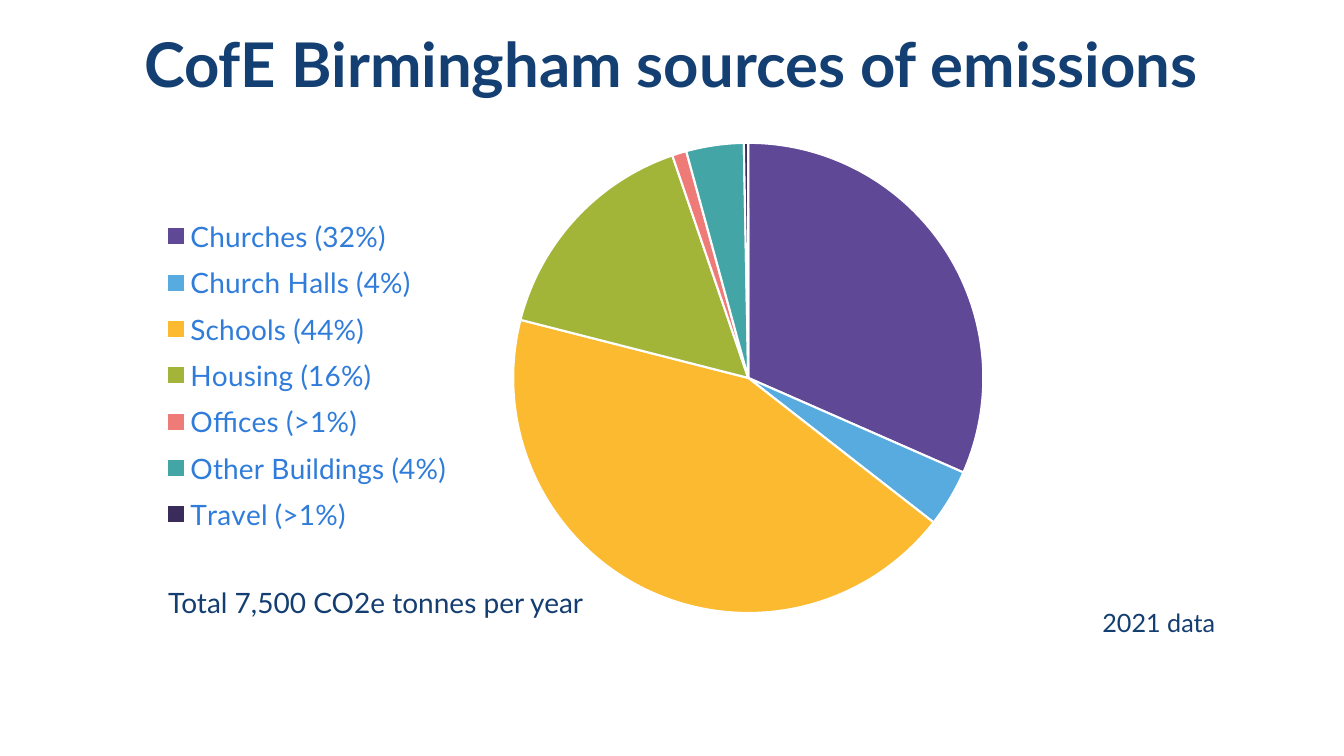
"""Build a slide with a pie chart of emission sources."""
import pptx
import pptx.chart.data
import pptx.dml.color
import pptx.enum.chart
import pptx.enum.text
import pptx.oxml
import pptx.oxml.ns
import pptx.util

Cm = pptx.util.Cm
Pt = pptx.util.Pt

FONT = "Lato"
NAVY = "143E71"
WHITE = "FFFFFF"
SOURCES = [
    ("Churches (32%)", 32, "5F4896"),
    ("Church Halls (4%)", 4, "57ABDF"),
    ("Schools (44%)", 44, "FBBA30"),
    ("Housing (16%)", 16, "A2B539"),
    ("Offices (>1%)", 1, "EF7B78"),
    ("Other Buildings (4%)", 4, "43A5A6"),
    ("Travel (>1%)", 0.3, "392B5A"),
]
CENTER = pptx.enum.text.PP_ALIGN.CENTER
LEFT = pptx.enum.text.PP_ALIGN.LEFT
TEXTS = [
    ("CofE Birmingham sources of emissions", (3.02, 0.53, 27.81, 2.13), 44, "143F72", True, CENTER),
    ("2021 data", (27.53, 15.19, 6.6, 1.02), 18, NAVY, False, LEFT),
    ("Total 7,500 CO2e tonnes per year", (3.99, 14.63, 12.27, 1.12), 20, NAVY, False, LEFT),
]
CHART_BOX = (3.02, 3.2, 24.18, 12.65)
PIE_AREA = {"x": 0.41, "y": 0.03, "w": 0.49, "h": 0.94}
LEGEND_AREA = {"x": 0.04, "y": 0.16, "w": 0.31, "h": 0.67}


def rgb(color):
    return pptx.dml.color.RGBColor.from_string(color)


def style_font(font, size, color, name=FONT, bold=False):
    font.size = Pt(size)
    font.name = name
    font.bold = bold
    font.color.rgb = rgb(color)


def make_layout(area, inner=False):
    target = '<c:layoutTarget val="inner"/>' if inner else ""
    modes = "".join(f'<c:{side}Mode val="edge"/>' for side in "xy")
    values = "".join(f'<c:{side} val="{value}"/>' for side, value in area.items())
    return pptx.oxml.parse_xml(
        f'<c:layout {pptx.oxml.ns.nsdecls("c")}><c:manualLayout>'
        f"{target}{modes}{values}</c:manualLayout></c:layout>"
    )


def add_text(slide, text, box, size, color, bold, alignment):
    text_frame = slide.shapes.add_textbox(*map(Cm, box)).text_frame
    text_frame.word_wrap = True
    text_frame.text = text
    paragraph = text_frame.paragraphs[0]
    paragraph.alignment = alignment
    style_font(paragraph.runs[0].font, size, color, bold=bold)


def add_emissions_pie(slide):
    names, values, colors = zip(*SOURCES)
    data = pptx.chart.data.CategoryChartData()
    data.categories = names
    data.add_series("Series 1", values)
    chart = slide.shapes.add_chart(
        pptx.enum.chart.XL_CHART_TYPE.PIE, *map(Cm, CHART_BOX), data
    ).chart
    chart.has_title = False
    style_font(chart.font, 10, NAVY, "Arial")

    plot = chart.plots[0]
    plot.vary_by_categories = True
    for index, color in enumerate(colors):
        slice_format = plot.series[0].points[index].format
        slice_format.fill.solid()
        slice_format.fill.fore_color.rgb = rgb(color)
        slice_format.line.color.rgb = rgb(WHITE)
        slice_format.line.width = Pt(1.5)

    chart.has_legend = True
    legend = chart.legend
    legend.position = pptx.enum.chart.XL_LEGEND_POSITION.LEFT
    legend.include_in_layout = False
    style_font(legend.font, 20, "2F7CDA")

    plot_area = chart.element.chart.plotArea
    for parent in (plot_area, legend._element):
        for layout in parent.findall(pptx.oxml.ns.qn("c:layout")):
            parent.remove(layout)
    plot_area.insert(0, make_layout(PIE_AREA, inner=True))
    legend._element.find(pptx.oxml.ns.qn("c:legendPos")).addnext(make_layout(LEGEND_AREA))


def main():
    presentation = pptx.Presentation()
    presentation.slide_width = Cm(33.87)
    presentation.slide_height = Cm(19.05)
    slide = presentation.slides.add_slide(presentation.slide_layouts[6])
    add_emissions_pie(slide)
    for text in TEXTS:
        add_text(slide, *text)
    presentation.save("out.pptx")


if __name__ == "__main__":
    main()
